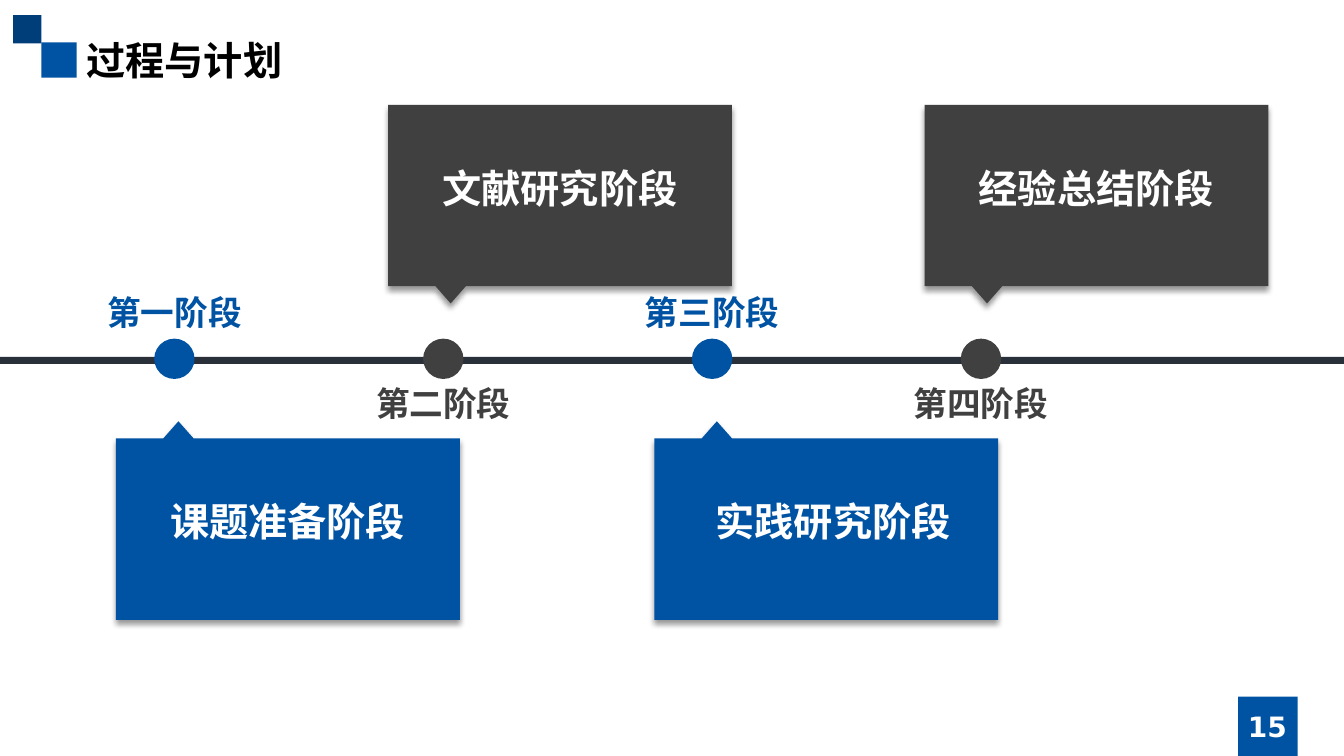
from dataclasses import dataclass

from lxml import etree
from pptx import Presentation
from pptx.dml.color import RGBColor
from pptx.enum import shapes, text
from pptx.oxml import ns
from pptx.util import Inches, Pt


@dataclass(frozen=True)
class Theme:
    """Colours, fonts and type sizes of the slide."""
    blue: str = "0053A3"
    navy: str = "003E7A"
    grey: str = "404040"
    slate: str = "29303A"
    black: str = "000000"
    white: str = "FFFFFF"
    han: str = "Noto Sans CJK SC"
    latin: str = "Arial"
    digit: str = "DejaVu Sans"
    head: int = 28
    label: int = 24
    page: int = 20


THEME = Theme()
RECT = shapes.MSO_SHAPE.RECTANGLE
OVAL = shapes.MSO_SHAPE.OVAL
LEFT, CENTER = text.PP_ALIGN.LEFT, text.PP_ALIGN.CENTER


def paint(shape, color):
    """Give a shape a flat fill with no line or shadow."""
    shape.shadow.inherit = False
    shape.fill.solid()
    shape.fill.fore_color.rgb = RGBColor.from_string(color)
    shape.line.fill.background()


def add_block(slide, kind, box, color):
    """Add a flat preset shape."""
    shape = slide.shapes.add_shape(kind, *map(Inches, box))
    paint(shape, color)


def add_words(parent, words, box, size, color, font=THEME.han, align=LEFT, wrap=False):
    """Add one line of bold text."""
    frame = parent.shapes.add_textbox(*map(Inches, box)).text_frame
    frame.word_wrap = wrap
    frame.vertical_anchor = text.MSO_ANCHOR.MIDDLE
    frame.text = words
    line = frame.paragraphs[0]
    line.alignment = align
    run = line.runs[0]
    run.font.name, run.font.size, run.font.bold = font, Pt(size), True
    run.font.color.rgb = RGBColor.from_string(color)
    etree.SubElement(run.font._element, ns.qn("a:ea"), typeface=THEME.han)


def add_shadow(shape):
    """Cast a soft shadow straight down."""
    effects = shape._element.spPr.find(ns.qn("a:effectLst"))
    outer = etree.SubElement(effects, ns.qn("a:outerShdw"), blurRad=str(Pt(4)),
                             dist=str(Pt(3)), dir="5400000", algn="t", rotWithShape="0")
    color = etree.SubElement(outer, ns.qn("a:srgbClr"), val=THEME.black)
    etree.SubElement(color, ns.qn("a:alpha"), val="40000")


def add_callout(slide, words, left, inset, above, color):
    """Add a callout box that points at the timeline, with its words."""
    tip, base, far = (3.01, 2.84, 1.04) if above else (4.18, 4.35, 6.15)
    right = left + 3.41
    points = [(left + 0.62, tip), (left + 0.77, base), (right, base), (right, far),
              (left, far), (left, base), (left + 0.47, base)]
    points = [(Inches(x), Inches(y)) for x, y in points]
    group = slide.shapes.add_group_shape()
    pen = group.shapes.build_freeform(*points[0])
    pen.add_line_segments(points[1:], close=True)
    shape = pen.convert_to_shape()
    paint(shape, color)
    add_shadow(shape)
    top = 1.58 if above else 4.88
    add_words(group, words, (left + inset, top, 2.53, 0.57), THEME.head, THEME.white)


def add_stage(slide, index, name, words, left, inset):
    """Add a stage: its dot, its label and its callout."""
    above = index % 2 == 1
    color = THEME.grey if above else THEME.blue
    mid = 1.73 + index * 8 / 3
    add_block(slide, OVAL, (mid - 0.2, 3.36, 0.4, 0.4), color)
    add_words(slide, name, (mid - 0.765, 3.75 if above else 2.85, 1.53, 0.5),
              THEME.label, color, THEME.latin, CENTER)
    add_callout(slide, words, left, inset, above, color)


def add_frame(slide):
    """Add the title, its corner squares and the page number."""
    add_block(slide, RECT, (0.41, 0.42, 0.35, 0.35), THEME.blue)
    add_block(slide, RECT, (0.13, 0.15, 0.28, 0.28), THEME.navy)
    add_block(slide, RECT, (12.28, 6.91, 0.59, 0.59), THEME.blue)
    add_words(slide, "过程与计划", (0.76, 0.31, 11.81, 0.57), THEME.head, THEME.black, wrap=True)
    add_words(slide, "15", (11.81, 7.01, 1.52, 0.4), THEME.page, THEME.white,
              THEME.digit, CENTER, True)


def main():
    """Build the timeline slide and save it."""
    deck = Presentation()
    deck.slide_width, deck.slide_height = Inches(13.33), Inches(7.5)
    slide = deck.slides.add_slide(deck.slide_layouts[6])
    add_frame(slide)
    add_block(slide, RECT, (0, 3.54, 13.33, 0.07), THEME.slate)
    stages = [
        ("第一阶段", "课题准备阶段", 1.15, 0.44),
        ("第二阶段", "文献研究阶段", 3.85, 0.44),
        ("第三阶段", "实践研究阶段", 6.49, 0.51),
        ("第四阶段", "经验总结阶段", 9.17, 0.44),
    ]
    for index, stage in enumerate(stages):
        add_stage(slide, index, *stage)
    deck.save("out.pptx")


if __name__ == "__main__":
    main()
